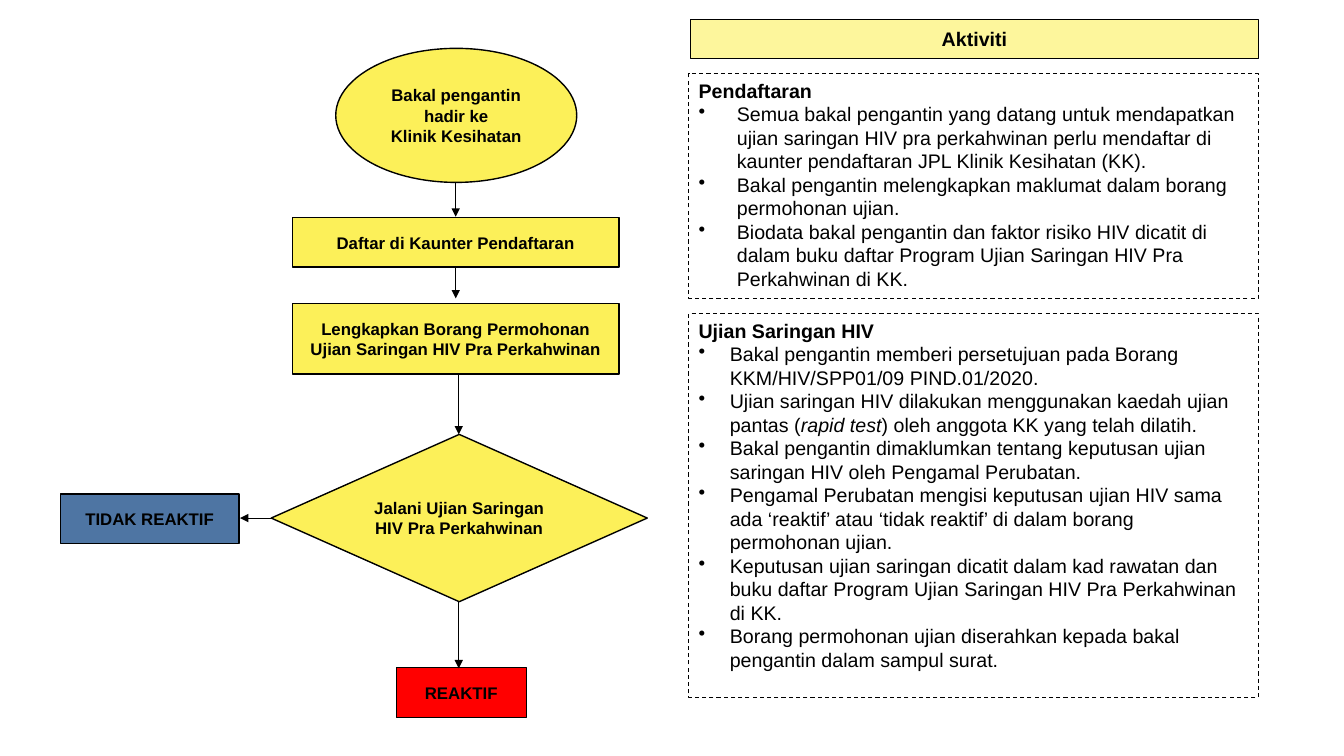
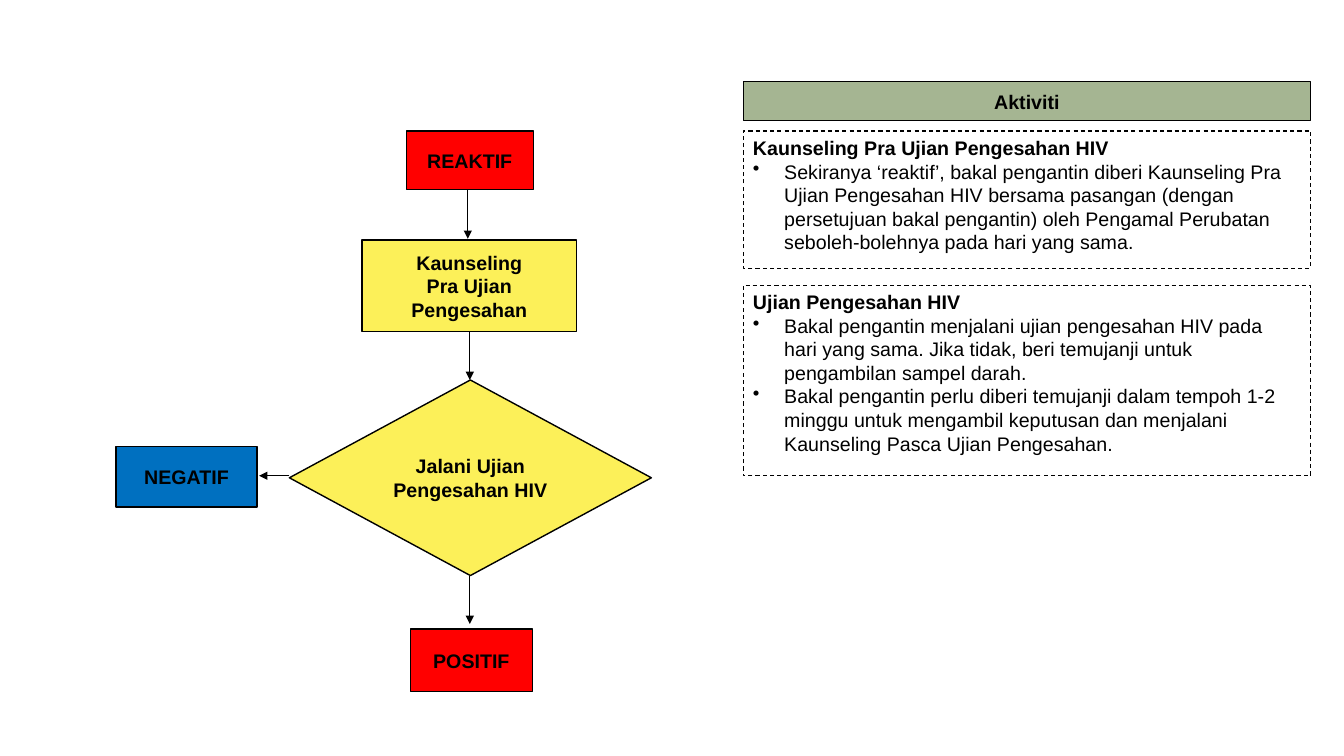
from lxml.etree import SubElement
from pptx import Presentation
from pptx.dml.color import RGBColor
from pptx.enum.dml import MSO_LINE
from pptx.enum.shapes import MSO_CONNECTOR, MSO_SHAPE
from pptx.enum.text import MSO_ANCHOR, PP_ALIGN
from pptx.oxml.ns import qn
from pptx.util import Inches, Pt

COLOURS = {
    "ink": "000000",
    "paper": "FFFFFF",
    "step": "FCF059",
    "positive": "FF0000",
    "non_reactive": "4E75A3",
    "negative": "0070C0",
    "header_yellow": "FDF69C",
    "header_green": "A5B592",
}
FONT = "Arial"
PANEL_SIZE = 14
OVAL, RECT, DIAMOND = MSO_SHAPE.OVAL, MSO_SHAPE.RECTANGLE, MSO_SHAPE.DIAMOND

# Steps: shape, (left, top, width, height), fill, lines of text
# Arrows: (start x, start y, end x, end y)
# Panels: (top, height), bullet indent, heading, bullets; *...* marks italics
SLIDES = [
    {
        "step_size": 12,
        "steps": [
            (OVAL, (3.33, 0.48, 2.39, 1.33), "step",
             ["Bakal pengantin hadir ke", "Klinik Kesihatan"]),
            (RECT, (2.9, 2.16, 3.24, 0.49), "step", ["Daftar di Kaunter Pendaftaran"]),
            (RECT, (2.9, 3.01, 3.24, 0.7), "step",
             ["Lengkapkan Borang Permohonan", "Ujian Saringan HIV Pra Perkahwinan"]),
            (DIAMOND, (2.69, 4.31, 3.73, 1.66), "step",
             ["Jalani Ujian Saringan HIV Pra Perkahwinan"]),
            (RECT, (3.93, 6.62, 1.29, 0.5), "positive", ["REAKTIF"]),
            (RECT, (0.6, 4.9, 1.77, 0.49), "non_reactive", ["TIDAK REAKTIF"]),
        ],
        "arrows": [
            (4.52, 1.81, 4.52, 2.15),
            (4.52, 2.65, 4.52, 2.96),
            (4.55, 3.71, 4.55, 4.31),
            (4.55, 5.97, 4.55, 6.63),
            (2.69, 5.14, 2.38, 5.14),
        ],
        "header": ((6.85, 0.19, 5.63, 0.39), "header_yellow"),
        "panel_left": 6.83,
        "panel_width": 5.65,
        "panels": [
            ((0.73, 2.23), 0.38, "Pendaftaran", [
                "Semua bakal pengantin yang datang untuk mendapatkan ujian saringan HIV "
                "pra perkahwinan perlu mendaftar di kaunter pendaftaran JPL Klinik "
                "Kesihatan (KK).",
                "Bakal pengantin melengkapkan maklumat dalam borang permohonan ujian.",
                "Biodata bakal pengantin dan faktor risiko HIV dicatit di dalam buku "
                "daftar Program Ujian Saringan HIV Pra Perkahwinan di KK.",
            ]),
            ((3.11, 3.81), 0.31, "Ujian Saringan HIV", [
                "Bakal pengantin memberi persetujuan pada Borang KKM/HIV/SPP01/09 "
                "PIND.01/2020.",
                "Ujian saringan HIV dilakukan menggunakan kaedah ujian pantas "
                "(*rapid test*) oleh anggota KK yang telah dilatih.",
                "Bakal pengantin dimaklumkan tentang keputusan ujian saringan HIV oleh "
                "Pengamal Perubatan.",
                "Pengamal Perubatan mengisi keputusan ujian HIV sama ada ‘reaktif’ atau "
                "‘tidak reaktif’ di dalam borang permohonan ujian.",
                "Keputusan ujian saringan dicatit dalam kad rawatan dan buku daftar "
                "Program Ujian Saringan HIV Pra Perkahwinan di KK.",
                "Borang permohonan ujian diserahkan kepada bakal pengantin dalam sampul "
                "surat.",
            ]),
        ],
    },
    {
        "step_size": 14,
        "steps": [
            (RECT, (4.03, 1.3, 1.26, 0.58), "positive", ["REAKTIF"]),
            (RECT, (3.59, 2.38, 2.13, 0.91), "step", ["Kaunseling", "Pra Ujian Pengesahan"]),
            (DIAMOND, (2.87, 3.77, 3.59, 1.94), "step", ["Jalani Ujian Pengesahan HIV"]),
            (RECT, (4.07, 6.24, 1.21, 0.62), "positive", ["POSITIF"]),
            (RECT, (1.15, 4.43, 1.4, 0.6), "negative", ["NEGATIF"]),
        ],
        "arrows": [
            (4.64, 1.89, 4.64, 2.37),
            (4.66, 3.29, 4.66, 3.77),
            (4.66, 5.71, 4.66, 6.19),
            (2.87, 4.72, 2.57, 4.72),
        ],
        "header": ((7.37, 0.81, 5.63, 0.39), "header_green"),
        "panel_left": 7.37,
        "panel_width": 5.63,
        "panels": [
            ((1.3, 1.36), 0.31, "Kaunseling Pra Ujian Pengesahan HIV", [
                "Sekiranya ‘reaktif’, bakal pengantin diberi Kaunseling Pra Ujian "
                "Pengesahan HIV bersama pasangan (dengan persetujuan bakal pengantin) "
                "oleh Pengamal Perubatan seboleh-bolehnya pada hari yang sama.",
            ]),
            ((2.83, 1.89), 0.31, "Ujian Pengesahan HIV", [
                "Bakal pengantin menjalani ujian pengesahan HIV pada hari yang sama. "
                "Jika tidak, beri temujanji untuk pengambilan sampel darah.",
                "Bakal pengantin perlu diberi temujanji dalam tempoh 1-2 minggu untuk "
                "mengambil keputusan dan menjalani Kaunseling Pasca Ujian Pengesahan.",
            ]),
        ],
    },
]


def add_box(shapes, kind, place, fill, line_width):
    box = shapes.add_shape(kind, *[Inches(length) for length in place])
    box.shadow.inherit = False
    box.fill.solid()
    box.fill.fore_color.rgb = RGBColor.from_string(COLOURS[fill])
    box.line.color.rgb = RGBColor.from_string(COLOURS["ink"])
    box.line.width = Pt(line_width)
    return box


def write_lines(frame, lines, size, align, bold=True):
    """Append one paragraph per line and return them; *...* becomes italic."""
    paras = []
    for line in lines:
        para = frame.add_paragraph() if frame.text else frame.paragraphs[0]
        para.alignment = align
        para.font.name = FONT
        para.font.size = Pt(size)
        para.font.bold = bold
        para.font.color.rgb = RGBColor.from_string(COLOURS["ink"])
        for index, part in enumerate(line.split("*")):
            span = para.add_run()
            span.text = part
            if index % 2:
                span.font.italic = True
        paras.append(para)
    return paras


deck = Presentation()
deck.slide_width = Inches(13.33)
deck.slide_height = Inches(7.5)
blank_layout = deck.slide_layouts[6]

for content in SLIDES:
    page = deck.slides.add_slide(blank_layout)

    # Flow chart
    flow = page.shapes.add_group_shape().shapes
    for kind, place, fill, lines in content["steps"]:
        frame = add_box(flow, kind, place, fill, 1).text_frame
        frame.margin_left = frame.margin_right = Inches(0.06)
        frame.margin_top = frame.margin_bottom = Inches(0.03)
        write_lines(frame, lines, content["step_size"], PP_ALIGN.CENTER)
    for ends in content["arrows"]:
        arrow = flow.add_connector(MSO_CONNECTOR.STRAIGHT, *[Inches(end) for end in ends])
        arrow.line.color.rgb = RGBColor.from_string(COLOURS["ink"])
        arrow.line.width = Pt(0.5)
        SubElement(arrow.line._get_or_add_ln(), qn("a:tailEnd"), type="triangle")
        SubElement(arrow._element.spPr, qn("a:effectLst"))

    # Activity column
    place, fill = content["header"]
    header = add_box(page.shapes, RECT, place, fill, 0.75)
    write_lines(header.text_frame, ["Aktiviti"], PANEL_SIZE, PP_ALIGN.CENTER)
    for (top, height), indent, heading, bullets in content["panels"]:
        place = (content["panel_left"], top, content["panel_width"], height)
        panel = add_box(page.shapes, RECT, place, "paper", 0.75)
        panel.line.dash_style = MSO_LINE.DASH
        frame = panel.text_frame
        frame.vertical_anchor = MSO_ANCHOR.TOP
        write_lines(frame, [heading], PANEL_SIZE, PP_ALIGN.LEFT)
        for para in write_lines(frame, bullets, PANEL_SIZE, PP_ALIGN.LEFT, bold=False):
            properties = para._p.get_or_add_pPr()
            properties.set("marL", str(Inches(indent)))
            properties.set("indent", str(-Inches(indent)))
            bullet = SubElement(properties, qn("a:buChar"), char="•")
            properties.remove(bullet)
            properties.insert(0, bullet)

deck.save("out.pptx")
